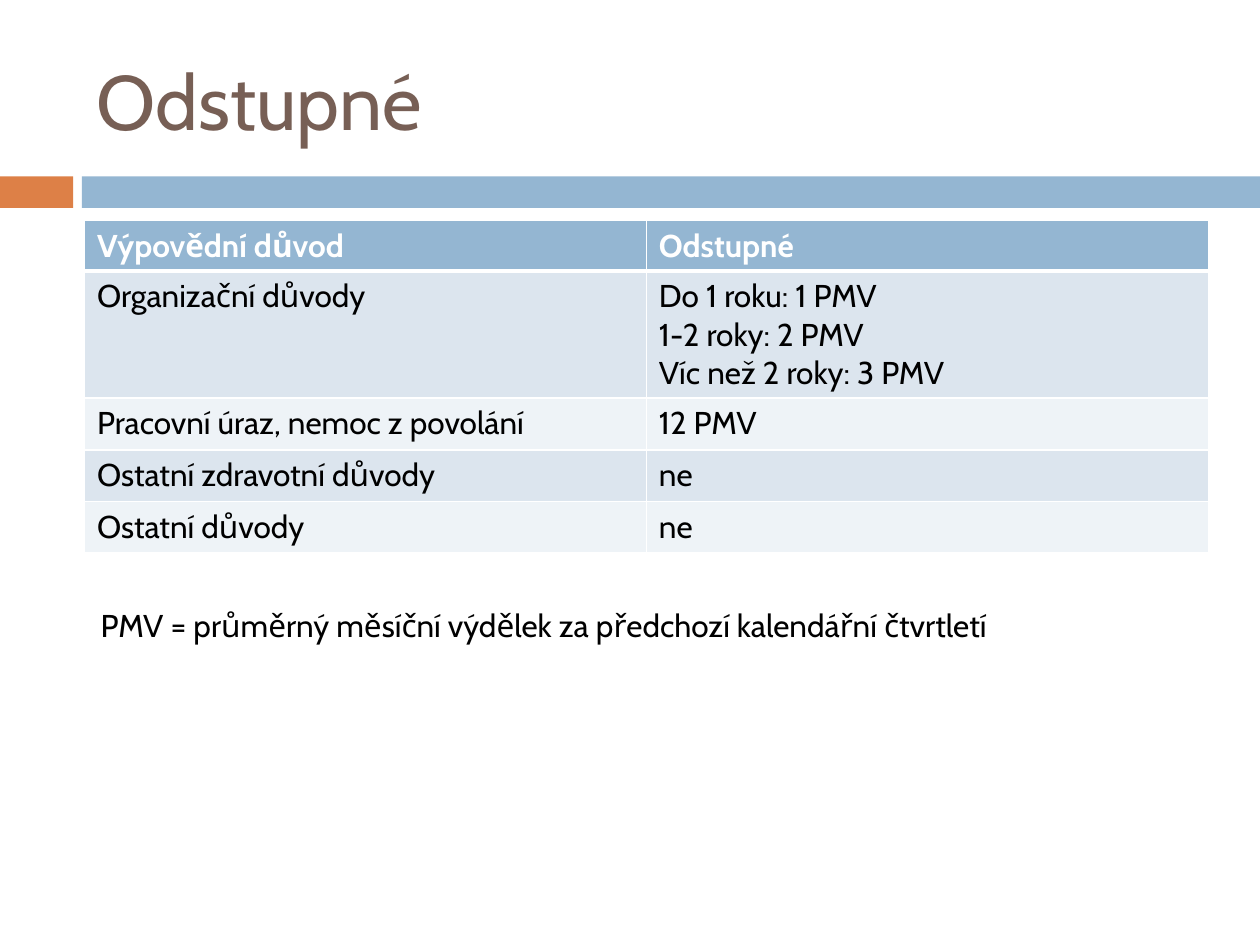
"""Build the severance pay slide with its table and footnote."""
from lxml import etree
from pptx import Presentation
from pptx.dml.color import RGBColor
from pptx.enum.shapes import MSO_SHAPE
from pptx.enum.text import MSO_ANCHOR
from pptx.oxml.ns import qn
from pptx.util import Inches, Pt

RECTANGLE = MSO_SHAPE.RECTANGLE
MIDDLE = MSO_ANCHOR.MIDDLE
TOP = MSO_ANCHOR.TOP
BLUE, ORANGE, BROWN = "94B6D2", "DD8047", "775F55"
WHITE, BLACK = "FFFFFF", "000000"
BANDS = ["DCE5EE", "EEF3F7"]


def color(value):
    return RGBColor.from_string(value)


def write_text(frame, text, size=18, font_color=BLACK, bold=False, anchor=TOP):
    frame.word_wrap = True
    frame.vertical_anchor = anchor
    for index, line in enumerate(text.split("\n")):
        paragraph = frame.paragraphs[0] if index == 0 else frame.add_paragraph()
        run = paragraph.add_run()
        run.text = line
        run.font.name = "Cabin"
        run.font.size = Pt(size)
        run.font.bold = bold
        run.font.color.rgb = color(font_color)


presentation = Presentation()
presentation.slide_width = Inches(10)
presentation.slide_height = Inches(7.5)
slide = presentation.slides.add_slide(presentation.slide_layouts[6])

for left, width, fill in [(0, 0.58, ORANGE), (0.65, 9.35, BLUE)]:
    bar = slide.shapes.add_shape(
        RECTANGLE, Inches(left), Inches(1.4), Inches(width), Inches(0.25))
    bar.shadow.inherit = False
    bar.fill.solid()
    bar.fill.fore_color.rgb = color(fill)
    bar.line.fill.background()

title = slide.shapes.add_textbox(
    Inches(0.67), Inches(0.25), Inches(8.92), Inches(1.08))
write_text(title.text_frame, "Odstupné", size=44, font_color=BROWN, anchor=MIDDLE)

rows = [
    ("Výpovědní důvod", "Odstupné"),
    ("Organizační důvody", "Do 1 roku: 1 PMV\n1-2 roky: 2 PMV\nVíc než 2 roky: 3 PMV"),
    ("Pracovní úraz, nemoc z povolání", "12 PMV"),
    ("Ostatní zdravotní důvody", "ne"),
    ("Ostatní důvody", "ne"),
]
row_heights = [0.4, 1.01, 0.41, 0.41, 0.41]
table = slide.shapes.add_table(
    len(rows), 2, Inches(0.67), Inches(1.75),
    Inches(8.92), Inches(sum(row_heights))).table

for row_index, texts in enumerate(rows):
    table.rows[row_index].height = Inches(row_heights[row_index])
    is_header = row_index == 0
    border_widths = {
        "a:lnL": 1,
        "a:lnR": 1,
        "a:lnT": 3 if row_index == 1 else 1,
        "a:lnB": 3 if is_header else 1,
    }
    for column_index, text in enumerate(texts):
        cell = table.cell(row_index, column_index)
        write_text(cell.text_frame, text,
                   font_color=WHITE if is_header else BLACK, bold=is_header)
        properties = cell._tc.get_or_add_tcPr()
        for tag, width in border_widths.items():
            border = etree.SubElement(properties, qn(tag), w=str(Pt(width)))
            border_fill = etree.SubElement(border, qn("a:solidFill"))
            etree.SubElement(border_fill, qn("a:srgbClr"), val=WHITE)
        cell.fill.solid()
        cell.fill.fore_color.rgb = color(
            BLUE if is_header else BANDS[(row_index - 1) % 2])

footnote = slide.shapes.add_textbox(
    Inches(0.7), Inches(4.76), Inches(8.79), Inches(0.4))
write_text(footnote.text_frame,
           "PMV = průměrný měsíční výdělek za předchozí kalendářní čtvrtletí")

presentation.save("out.pptx")
